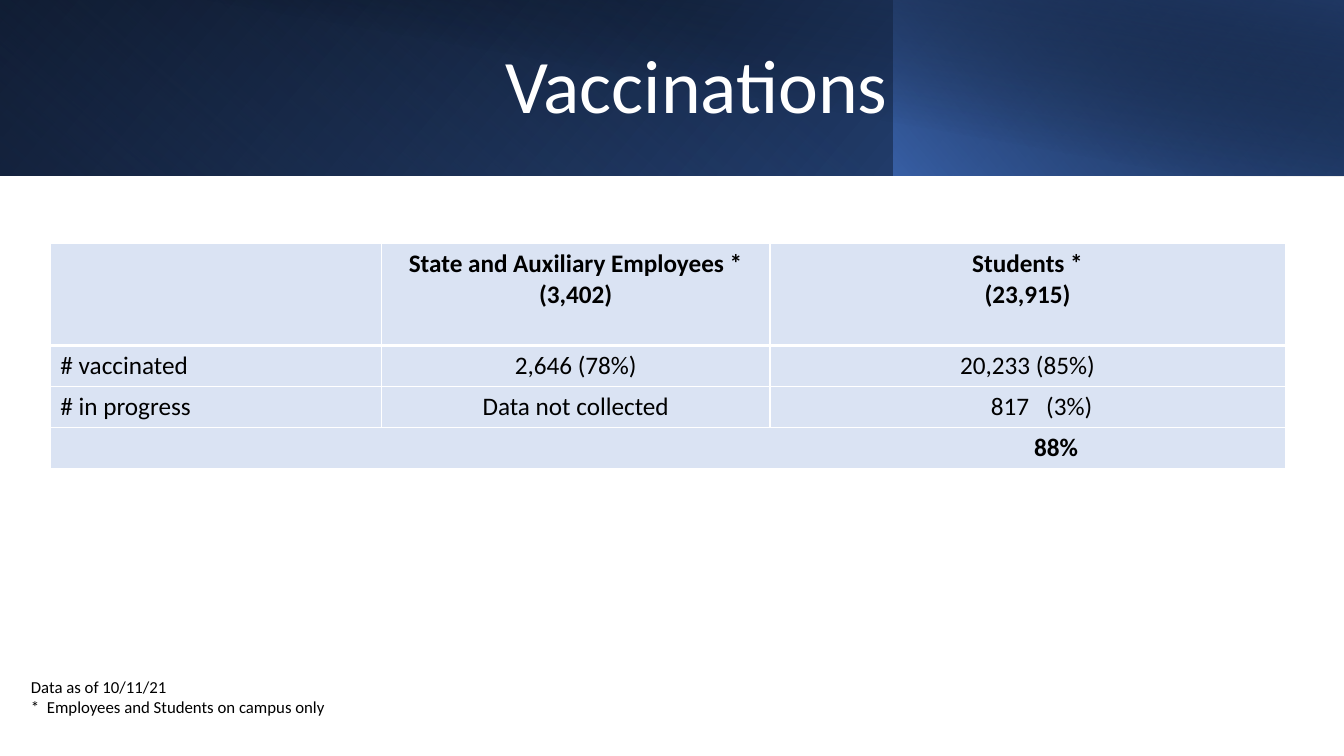
"""Build the vaccination summary slide."""
import pptx
import pptx.dml.color
import pptx.enum.shapes
import pptx.enum.text
import pptx.oxml
import pptx.oxml.ns
import pptx.util

Pt = pptx.util.Pt
ALIGN = pptx.enum.text.PP_ALIGN
SPACE = pptx.oxml.ns.nsdecls("a")


def tint(code):
    return pptx.dml.color.RGBColor.from_string(code)


def write(frame, text, size=18, color="000000", bold=False, font="Calibri",
          align=ALIGN.LEFT, line=None, left=0, gap=0):
    for num, row in enumerate(text.split("\n")):
        para = frame.add_paragraph() if num else frame.paragraphs[0]
        para.alignment = align
        if line:
            para.line_spacing = line
        if left:
            para._p.get_or_add_pPr().set("marL", str(Pt(left)))
        for pos, part in enumerate(row.split("|")):
            for word in ([" ", part] if pos else [part]):
                run = para.add_run()
                run.text = word
                run.font.name = font
                run.font.size = Pt(size)
                run.font.bold = bold
                run.font.color.rgb = tint(color)
                if word == " ":
                    run._r.get_or_add_rPr().set("spc", str(round(gap * 100)))


class Deck:
    """Hold the style and the current slide."""

    cell = "DAE3F3"
    rule = "FFFFFF"

    def __init__(self):
        self.file = pptx.Presentation()
        self.file.slide_width = Pt(960)
        self.file.slide_height = Pt(540)
        self.slide = self.file.slides.add_slide(self.file.slide_layouts[6])

    def band(self, box, stops, angle):
        kind = pptx.enum.shapes.MSO_SHAPE.RECTANGLE
        shape = self.slide.shapes.add_shape(kind, *map(Pt, box))
        shape.shadow.inherit = False
        shape.line.fill.background()
        shape.fill.background()
        marks = "".join(
            f'<a:gs pos="{pos * 1000}"><a:srgbClr val="{code}">'
            f'<a:alpha val="{alpha * 1000}"/></a:srgbClr></a:gs>'
            for pos, code, alpha in stops)
        grad = pptx.oxml.parse_xml(
            f'<a:gradFill {SPACE} rotWithShape="1"><a:gsLst>{marks}</a:gsLst>'
            f'<a:lin ang="{angle * 60000}" scaled="0"/></a:gradFill>')
        props = shape._element.spPr
        props.replace(props.find(pptx.oxml.ns.qn("a:noFill")), grad)

    def text(self, box, text, anchor=pptx.enum.text.MSO_ANCHOR.TOP, **form):
        frame = self.slide.shapes.add_textbox(*map(Pt, box)).text_frame
        frame.word_wrap = True
        frame.vertical_anchor = anchor
        write(frame, text, **form)

    def edge(self, cell, sides):
        props = cell._tc.get_or_add_tcPr()
        for num, (side, width) in enumerate(sides.items()):
            props.insert(num, pptx.oxml.parse_xml(
                f'<a:ln{side} {SPACE} w="{Pt(width)}"><a:solidFill>'
                f'<a:srgbClr val="{self.rule}"/></a:solidFill></a:ln{side}>'))

    def table(self, box, cols, rows, cells):
        frame = self.slide.shapes.add_table(len(rows), len(cols), *map(Pt, box))
        grid = frame.table
        grid.first_row = grid.horz_banding = False
        for col, width in zip(grid.columns, cols):
            col.width = Pt(width)
        for row, height in zip(grid.rows, rows):
            row.height = Pt(height)
        for r, line in enumerate(cells):
            for c, (text, form) in enumerate(line):
                cell = grid.cell(r, c)
                cell.fill.solid()
                cell.fill.fore_color.rgb = tint(self.cell)
                self.edge(cell, {"L": 1, "R": 1, "T": 3 if r == 1 else 1,
                                 "B": 3 if r == 0 else 1})
                write(cell.text_frame, text, **form)
        return grid


def main():
    deck = Deck()
    deck.band((0, 0, 960, 125.5),
              [(0, "000000", 100), (100, "2F5597", 100)], 40)
    deck.band((0, 0, 639, 125.5),
              [(20, "4472C4", 0), (100, "203864", 55)], 130)
    deck.band((638.5, 0, 321.5, 125.5),
              [(0, "4472C4", 66), (100, "000000", 30)], 320)
    deck.band((36, 0, 924, 126),
              [(50, "000000", 0), (99, "203864", 52)], 280)
    deck.text((108, 23, 779, 81.5), "Vaccinations", size=54, color="FFFFFF",
              align=ALIGN.CENTER, line=0.9,
              anchor=pptx.enum.text.MSO_ANCHOR.MIDDLE)

    mid = {"align": ALIGN.CENTER}
    head = {"align": ALIGN.CENTER, "bold": True}
    cells = [
        [("", {}), ("State and Auxiliary Employees *\n(3,402)", head),
         ("Students *\n(23,915)", head)],
        [("# vaccinated", {}), ("2,646 (78%)", mid), ("20,233 (85%)", mid)],
        [("# in progress", {}), ("Data not collected", mid),
         ("817|(3%)", {"align": ALIGN.CENTER, "left": 20, "gap": 8})],
        [("88%", {"bold": True, "left": 695.5}), ("", {}), ("", {})],
    ]
    grid = deck.table((36, 174, 882, 160.5), (236.5, 277.5, 368),
                      (72.9, 29.2, 29.2, 29.2), cells)
    grid.cell(3, 0).merge(grid.cell(3, 2))
    deck.text((15, 480, 270, 36),
              "Data as of 10/11/21\n*|Employees and Students on campus only",
              size=12, gap=2.7)
    deck.file.save("out.pptx")


if __name__ == "__main__":
    main()
